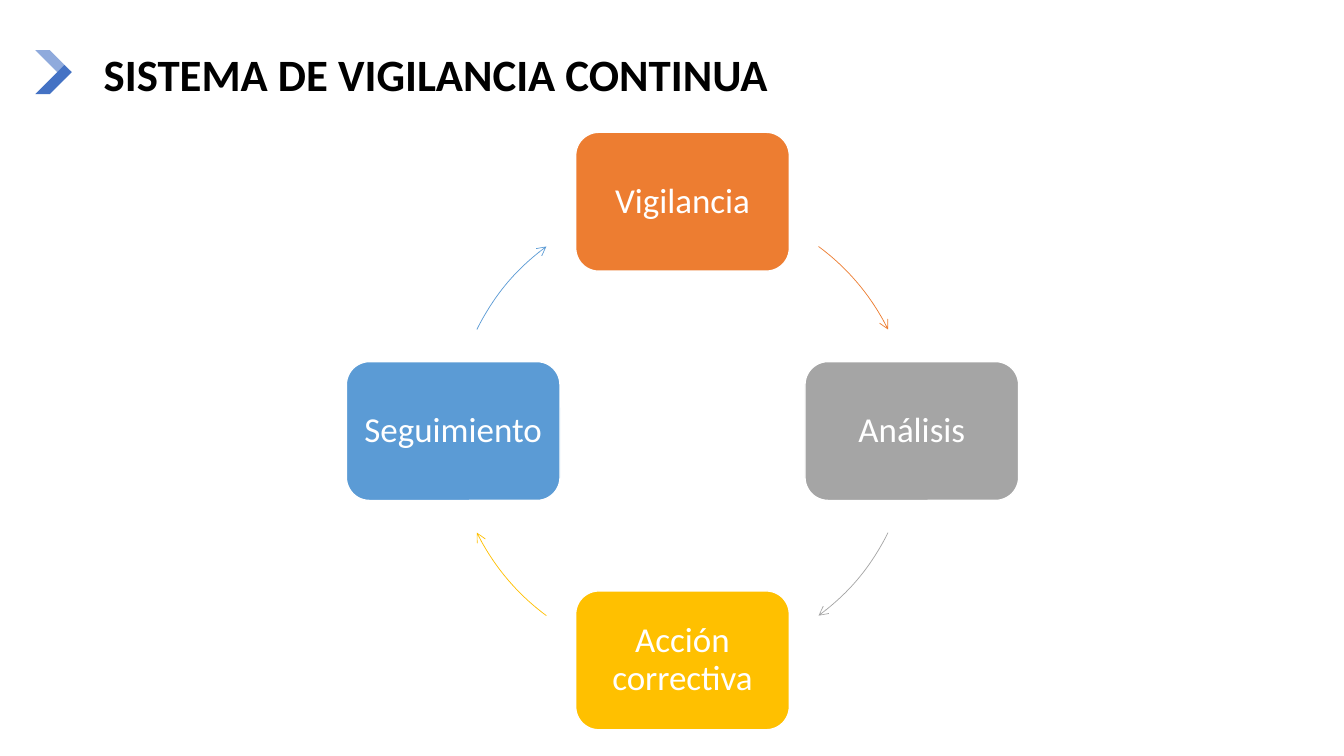
from dataclasses import dataclass
from math import cos, radians, sin

from lxml import etree
from pptx import Presentation
from pptx import util as u
from pptx.dml.color import RGBColor
from pptx.enum import shapes, text
from pptx.oxml import ns


@dataclass(frozen=True)
class Theme:
    """Colours, font and type sizes of the slide."""
    font: str = "Calibri"
    title_size: float = 32
    step_size: float = 25
    ink: str = "000000"
    paper: str = "FFFFFF"
    chevron_light: str = "8FAADC"
    chevron_dark: str = "4472C4"
    orange: str = "ED7D31"
    grey: str = "A5A5A5"
    gold: str = "FFC000"
    blue: str = "5B9BD5"


THEME = Theme()
STEPS = [
    ("Vigilancia", THEME.orange, (-53.6, -26.3)),
    ("Análisis", THEME.grey, (26.3, 53.6)),
    ("Acción correctiva", THEME.gold, (126.4, 153.7)),
    ("Seguimiento", THEME.blue, (206.3, 233.6)),
]


def colour(code):
    """Return the colour for a hexadecimal code."""
    return RGBColor.from_string(code)


def write(shape, words, size, code, bold=False):
    """Put one formatted paragraph into a shape and return it."""
    frame = shape.text_frame
    frame.word_wrap = True
    frame.vertical_anchor = text.MSO_ANCHOR.MIDDLE
    frame.text = words
    paragraph = frame.paragraphs[0]
    paragraph.line_spacing = 0.9
    font = paragraph.runs[0].font
    font.name, font.size, font.bold = THEME.font, u.Pt(size), bold
    font.color.rgb = colour(code)
    return paragraph


def add_chevron(slide, left, top, width, height):
    """Draw the two-tone chevron in the given box."""
    arm, fold = 0.4 * width, 0.8 * width
    for code, start, direction in (
        (THEME.chevron_light, top, 1),
        (THEME.chevron_dark, top + height, -1),
    ):
        middle = start + direction * height / 2
        tip = start + direction * height * 0.66
        outline = [(left, start), (left + fold, tip),
                   (left + width, middle), (left + arm, start)]
        points = [(u.Pt(x), u.Pt(y)) for x, y in outline]
        builder = slide.shapes.build_freeform(*points[0])
        builder.add_line_segments(points[1:], close=True)
        shape = builder.convert_to_shape()
        shape.shadow.inherit = False
        shape.fill.solid()
        shape.fill.fore_color.rgb = colour(code)
        shape.line.fill.background()


def add_title(slide, left, top, width, height):
    """Write the slide title in the given box."""
    box = slide.shapes.add_textbox(*map(u.Pt, (left, top, width, height)))
    write(box, "SISTEMA DE VIGILANCIA CONTINUA", THEME.title_size, THEME.ink, bold=True)


def add_step(slide, words, code, left, top, width, height):
    """Draw one labelled step of the cycle."""
    shape = slide.shapes.add_shape(
        shapes.MSO_SHAPE.ROUNDED_RECTANGLE, *map(u.Pt, (left, top, width, height)))
    shape.shadow.inherit = False
    shape.fill.solid()
    shape.fill.fore_color.rgb = colour(code)
    shape.line.color.rgb = colour(THEME.paper)
    shape.line.width = u.Pt(1)
    frame = shape.text_frame
    frame.margin_left = frame.margin_right = u.Pt(8)
    paragraph = write(shape, words, THEME.step_size, THEME.paper)
    paragraph.alignment = text.PP_ALIGN.CENTER


def add_arc_arrow(slide, code, angles, left, top, diameter):
    """Draw an arrow along the circle between two clockwise angles."""
    shape = slide.shapes.add_shape(
        shapes.MSO_SHAPE.ARC, *map(u.Pt, (left, top, diameter, diameter)))
    for index, angle in enumerate(angles):
        shape.adjustments[index] = angle % 360 * 0.6
    shape.shadow.inherit = False
    shape.fill.background()
    shape.line.color.rgb = colour(code)
    shape.line.width = u.Pt(0.5)
    line = shape.line._get_or_add_ln()
    etree.SubElement(line, ns.qn("a:tailEnd"), type="arrow")


def add_cycle(slide, left, top, width, height):
    """Place the steps and arrows of the cycle in the given box."""
    step_width, step_height = 152.64, 99.2
    radius = (height - step_height) / 2
    centre_x, centre_y = left + width / 2, top + height / 2
    for index, (words, code, angles) in enumerate(STEPS):
        turn = radians(360 / len(STEPS) * index - 90)
        step_left = centre_x + radius * cos(turn) - step_width / 2
        step_top = centre_y + radius * sin(turn) - step_height / 2
        add_step(slide, words, code, step_left, step_top, step_width, step_height)
        add_arc_arrow(slide, code, angles, centre_x - radius, centre_y - radius, 2 * radius)


def main():
    """Build and save the presentation."""
    presentation = Presentation()
    presentation.slide_width, presentation.slide_height = u.Pt(960), u.Pt(540)
    slide = presentation.slides.add_slide(presentation.slide_layouts[6])
    add_chevron(slide, 25.2, 35.8, 26, 31.4)
    add_title(slide, 67, 22.3, 828, 65.5)
    add_cycle(slide, 247.5, 94.5, 480, 426.8)
    presentation.save("out.pptx")


if __name__ == "__main__":
    main()
